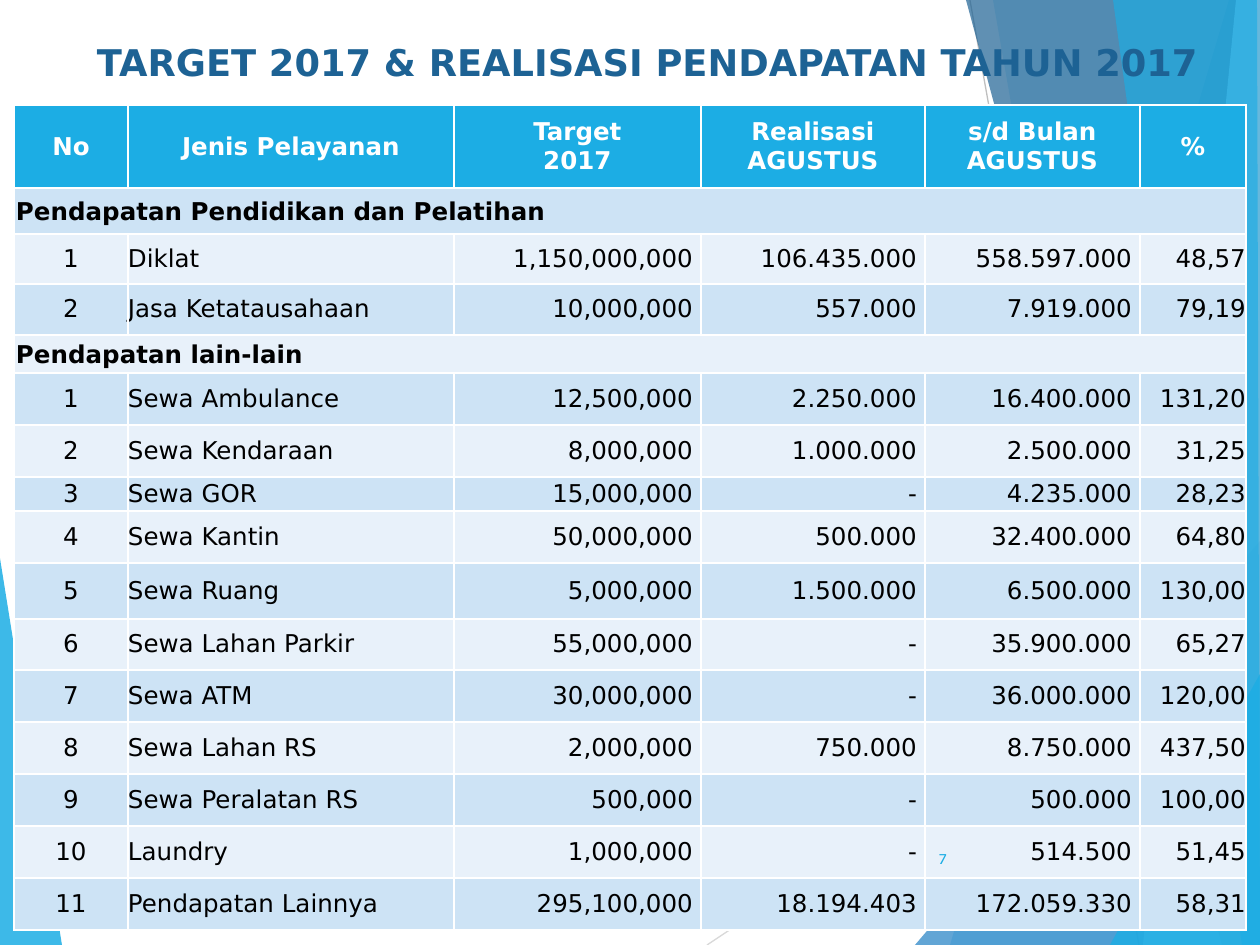
from dataclasses import dataclass

from lxml import etree
from pptx import Presentation
from pptx.dml.color import RGBColor
from pptx.enum.shapes import MSO_CONNECTOR
from pptx.enum.text import MSO_ANCHOR, PP_ALIGN
from pptx.oxml.ns import qn
from pptx.util import Pt

PX = 914400 / 126
WIDE, HIGH = 1260, 945
LEFT, MID, RIGHT = PP_ALIGN.LEFT, PP_ALIGN.CENTER, PP_ALIGN.RIGHT
CENTRE = MSO_ANCHOR.MIDDLE
STRAIGHT = MSO_CONNECTOR.STRAIGHT
SANS = "DejaVu Sans"
BLUE, NAVY, WHITE, BLACK = "1CADE4", "1D6294", "FFFFFF", "000000"
BANDS = ("CDE3F5", "E8F1FA")


@dataclass
class Facet:
    points: list[tuple[int, int]]
    color: str
    alpha: int


@dataclass
class Rule:
    start: tuple[int, int]
    end: tuple[int, int]
    color: str


@dataclass
class Label:
    text: str
    box: tuple[int, int, int, int]
    align: PP_ALIGN
    font: dict


CORNER = Facet([(0, 558), (62, HIGH), (0, HIGH)], BLUE, 85)
RULES = [
    Rule((707, 945), (1260, 576), "D9D9D9"),
    Rule((970, 0), (1139, 945), "BFBFBF"),
]
FACETS = [
    Facet([(1229, 0), (950, 945), (1260, 945), (1260, 0)], BLUE, 30),
    Facet([(993, 0), (1158, 945), (1260, 945), (1260, 0)], BLUE, 20),
    Facet([(915, 945), (1260, 541), (1260, 945)], "2683C6", 72),
    Facet([(966, 0), (1222, 945), (1260, 945), (1260, 0)], NAVY, 70),
    Facet([(1236, 0), (1143, 945), (1260, 945), (1260, 0)], "77CEEF", 70),
    Facet([(1113, 0), (1242, 945), (1260, 945), (1257, 0)], BLUE, 65),
    Facet([(1110, 945), (1260, 674), (1260, 945)], BLUE, 80),
]
TITLE = Label("TARGET 2017 & REALISASI PENDAPATAN TAHUN 2017", (63, 29, 1169, 66),
              MID, {"name": SANS, "size": Pt(21), "bold": True, "color": NAVY})
PAGE = Label("7", (888, 833, 71, 50), RIGHT,
             {"name": "Karla", "size": Pt(9), "bold": False, "color": BLUE})

COLS = [114, 326, 247, 224, 215, 106]
HEIGHTS = [83, 46, 50, 51, 38, 52, 52, 34, 52, 56, 51, 52, 52, 52, 52, 52]
ALIGNS = [MID, LEFT, RIGHT, RIGHT, RIGHT, RIGHT]
PADS = [0, 0, 8, 8, 8, 0]
ROWS = [
    ["No", "Jenis Pelayanan", "Target\n2017", "Realisasi\nAGUSTUS",
     "s/d Bulan AGUSTUS", "%"],
    ["Pendapatan Pendidikan dan Pelatihan"],
    ["1", "Diklat", "1,150,000,000", "106.435.000", "558.597.000", "48,57"],
    ["2", "Jasa Ketatausahaan", "10,000,000", "557.000", "7.919.000", "79,19"],
    ["Pendapatan lain-lain"],
    ["1", "Sewa Ambulance", "12,500,000", "2.250.000", "16.400.000", "131,20"],
    ["2", "Sewa Kendaraan", "8,000,000", "1.000.000", "2.500.000", "31,25"],
    ["3", "Sewa GOR", "15,000,000", "-", "4.235.000", "28,23"],
    ["4", "Sewa Kantin", "50,000,000", "500.000", "32.400.000", "64,80"],
    ["5", "Sewa Ruang", "5,000,000", "1.500.000", "6.500.000", "130,00"],
    ["6", "Sewa Lahan Parkir", "55,000,000", "-", "35.900.000", "65,27"],
    ["7", "Sewa ATM", "30,000,000", "-", "36.000.000", "120,00"],
    ["8", "Sewa Lahan RS", "2,000,000", "750.000", "8.750.000", "437,50"],
    ["9", "Sewa Peralatan RS", "500,000", "-", "500.000", "100,00"],
    ["10", "Laundry", "1,000,000", "-", "514.500", "51,45"],
    ["11", "Pendapatan Lainnya", "295,100,000", "18.194.403", "172.059.330", "58,31"],
]


def emu(px: int) -> int:
    return round(px * PX)


def paint(target, color: str) -> None:
    target.rgb = RGBColor.from_string(color)


def fill(item, color: str) -> None:
    item.fill.solid()
    paint(item.fill.fore_color, color)


def style(frame, align: PP_ALIGN, font: dict) -> None:
    for para in frame.paragraphs:
        para.alignment = align
        for run in para.runs:
            for key, value in font.items():
                if key == "color":
                    paint(run.font.color, value)
                else:
                    setattr(run.font, key, value)


def draw_facet(slide, facet: Facet) -> None:
    first, *rest = [(emu(x), emu(y)) for x, y in facet.points]
    pen = slide.shapes.build_freeform(*first)
    pen.add_line_segments(rest, close=True)
    shape = pen.convert_to_shape()
    shape.shadow.inherit = False
    shape.line.fill.background()
    fill(shape, facet.color)
    tint = shape.fill._xPr.find(qn("a:solidFill"))[0]
    etree.SubElement(tint, qn("a:alpha"), val=str(facet.alpha * 1000))


def draw_rule(slide, rule: Rule) -> None:
    ends = map(emu, rule.start + rule.end)
    line = slide.shapes.add_connector(STRAIGHT, *ends)
    line.line.width = Pt(0.75)
    paint(line.line.color, rule.color)
    etree.SubElement(line._element.spPr, qn("a:effectLst"))


def draw_label(slide, label: Label) -> None:
    frame = slide.shapes.add_textbox(*map(emu, label.box)).text_frame
    frame.word_wrap = True
    frame.vertical_anchor = CENTRE
    frame.text = label.text
    style(frame, label.align, label.font)


def draw_cell(cell, text: str, color: str, pads: tuple, align: PP_ALIGN,
              bold: bool, ink: str) -> None:
    fill(cell, color)
    cell.vertical_anchor = CENTRE
    for side, pad in zip(("left", "top", "right", "bottom"), pads):
        setattr(cell, f"margin_{side}", emu(pad))
    cell.text = text
    font = {"name": SANS, "size": Pt(14), "bold": bold, "color": ink}
    style(cell.text_frame, align, font)


def draw_table(slide) -> None:
    box = map(emu, (14, 105, sum(COLS), sum(HEIGHTS)))
    table = slide.shapes.add_table(len(ROWS), len(COLS), *box).table
    for col, width in zip(table.columns, COLS):
        col.width = emu(width)
    for r, (row, high) in enumerate(zip(ROWS, HEIGHTS)):
        table.rows[r].height = emu(high)
        band = BANDS[(r - 1) % 2]
        if len(row) == 1:
            table.cell(r, 0).merge(table.cell(r, len(COLS) - 1))
        for c, text in enumerate(row):
            cell = table.cell(r, c)
            if r == 0:
                draw_cell(cell, text, BLUE, (19, 9, 19, 9), MID, True, WHITE)
            elif len(row) == 1:
                draw_cell(cell, text, band, (2, 2, 2, 0), LEFT, True, BLACK)
            else:
                draw_cell(cell, text, band, (0, 0, PADS[c], 0), ALIGNS[c], False, BLACK)


def main() -> None:
    deck = Presentation()
    deck.slide_width, deck.slide_height = emu(WIDE), emu(HIGH)
    slide = deck.slides.add_slide(deck.slide_layouts[6])

    # Backdrop
    draw_facet(slide, CORNER)
    for rule in RULES:
        draw_rule(slide, rule)
    for facet in FACETS:
        draw_facet(slide, facet)

    # Title, figures and page number
    draw_label(slide, TITLE)
    draw_table(slide)
    draw_label(slide, PAGE)
    deck.save("out.pptx")


if __name__ == "__main__":
    main()
